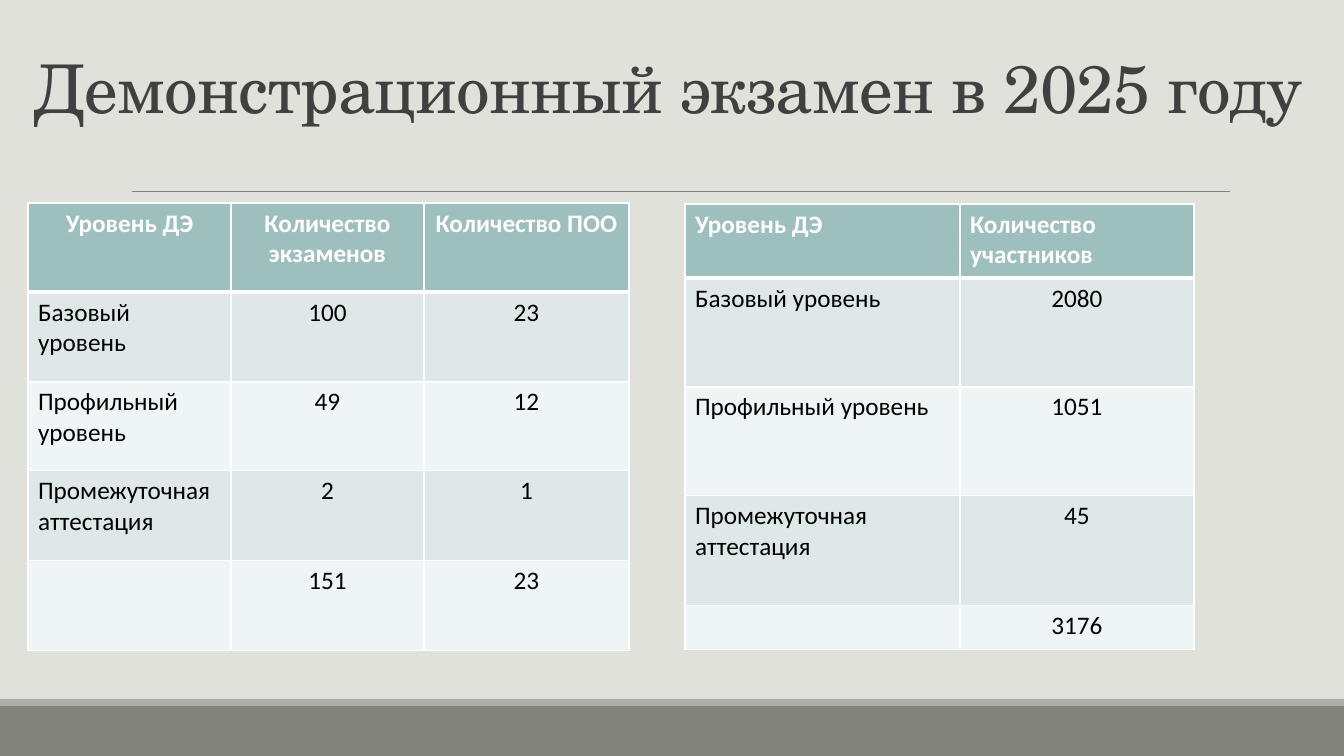
from pptx import Presentation
from pptx.dml.color import RGBColor
from pptx.enum.shapes import MSO_CONNECTOR as CONN, MSO_SHAPE as SHAPE
from pptx.enum.text import MSO_ANCHOR as ANCHOR, MSO_AUTO_SIZE as AUTO, PP_ALIGN as AL
from pptx.oxml.ns import qn
from pptx.util import Pt
from lxml.etree import SubElement

PX = 9071.43  # EMU per px, 100.8 px to the inch
THEME = {
    "bg": "E1E1DB", "bar": "82847C", "strip": "ACADA8", "rule": "808080",
    "title": "404040", "text": "000000", "white": "FFFFFF",
    "header": "9DBFBE", "bands": ("DFE8E8", "EFF4F4"),
    "title_font": "TeX Gyre Schola", "body_font": "Calibri",
    "title_size": 48, "body_size": 18,
}
rgb = RGBColor.from_string


def px(*lengths):
    return [round(n * PX) for n in lengths]


def write(tf, text, font=THEME["body_font"], size=THEME["body_size"],
          color=THEME["text"], bold=False, align=AL.LEFT):
    p = tf.paragraphs[0]
    p.alignment = align
    p.font.size = Pt(size)
    if text:
        r = p.add_run()
        r.text = text
        r.font.name, r.font.size, r.font.bold = font, Pt(size), bold
        r.font.color.rgb = rgb(color)
    return p


prs = Presentation()
prs.slide_width, prs.slide_height = px(1344, 756)
s = prs.slides.add_slide(prs.slide_layouts[5])
s.background.fill.solid()
s.background.fill.fore_color.rgb = rgb(THEME["bg"])

# Footer bands
for top, height, color in ((706, 50, "bar"), (699, 7, "strip")):
    sp = s.shapes.add_shape(SHAPE.RECTANGLE, *px(0, top, 1344, height))
    sp.shadow.inherit = False
    sp.fill.solid()
    sp.fill.fore_color.rgb = rgb(THEME[color])
    sp.line.fill.background()

# Rule under the title
rule = s.shapes.add_connector(CONN.STRAIGHT, *px(132, 191, 1230, 191))
rule.line.color.rgb = rgb(THEME["rule"])
rule.line.width = Pt(0.5)
SubElement(rule._element.spPr, qn("a:effectLst"))

# Title
title = s.shapes.title
title.left, title.top, title.width, title.height = px(24, 31, 1301, 101)
tf = title.text_frame
tf.word_wrap, tf.auto_size, tf.vertical_anchor = True, AUTO.NONE, ANCHOR.BOTTOM
p = write(tf, "Демонстрационный экзамен в 2025 году", font=THEME["title_font"],
          size=THEME["title_size"], color=THEME["title"])
p.line_spacing = 0.85
p.runs[0]._r.get_or_add_rPr().set("spc", "-50")

# Tables: place, column widths, row heights, header alignment, rows
tables = [
    ((28, 203), (203, 193, 205), (89, 90, 89, 90, 90), AL.CENTER, [
        ("Уровень ДЭ", "Количество экзаменов", "Количество ПОО"),
        ("Базовый уровень", "100", "23"),
        ("Профильный уровень", "49", "12"),
        ("Промежуточная аттестация", "2", "1"),
        ("", "151", "23"),
    ]),
    ((685, 204), (275, 234), (74, 109, 109, 110, 44), AL.LEFT, [
        ("Уровень ДЭ", "Количество участников"),
        ("Базовый уровень", "2080"),
        ("Профильный уровень", "1051"),
        ("Промежуточная аттестация", "45"),
        ("", "3176"),
    ]),
]
for place, widths, heights, header_align, rows in tables:
    size = sum(widths), sum(heights)
    table = s.shapes.add_table(len(rows), len(widths), *px(*place, *size)).table
    for column, width in zip(table.columns, px(*widths)):
        column.width = width
    for row, height in zip(table.rows, px(*heights)):
        row.height = height

    for i, row in enumerate(rows):
        for j, text in enumerate(row):
            cell = table.cell(i, j)
            # Borders: thick only between the header and the body
            tcPr = cell._tc.get_or_add_tcPr()
            for side in ("lnL", "lnR", "lnT", "lnB"):
                thick = (i, side) in ((0, "lnB"), (1, "lnT"))
                ln = SubElement(tcPr, qn(f"a:{side}"), w=str(Pt(3 if thick else 1)))
                fill = SubElement(ln, qn("a:solidFill"))
                SubElement(fill, qn("a:srgbClr"), val=THEME["white"])
            # Fill and text
            cell.fill.solid()
            if i == 0:
                cell.fill.fore_color.rgb = rgb(THEME["header"])
                write(cell.text_frame, text, color=THEME["white"], bold=True,
                      align=header_align)
            else:
                cell.fill.fore_color.rgb = rgb(THEME["bands"][(i - 1) % 2])
                write(cell.text_frame, text, align=AL.CENTER if j else AL.LEFT)

prs.save("out.pptx")
